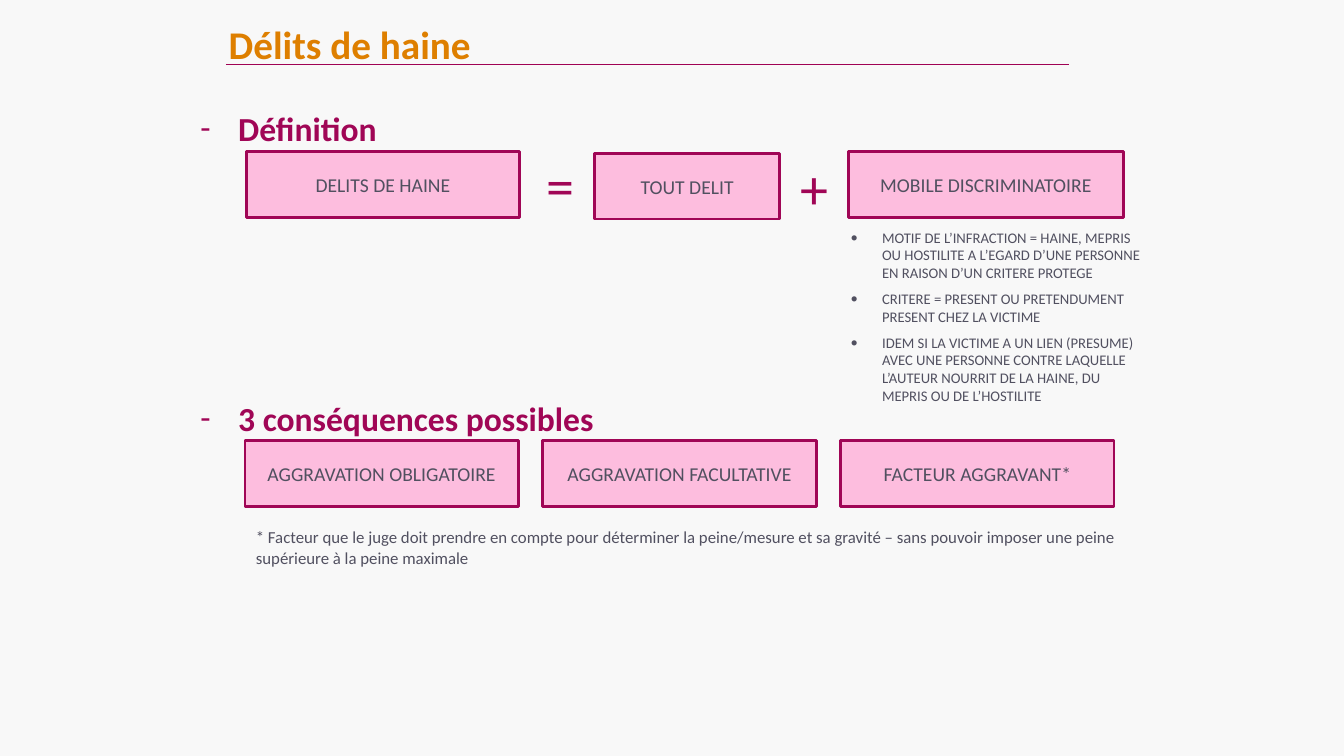
from lxml import etree
from pptx import Presentation
from pptx import dml
from pptx import util as u
from pptx.dml import color
from pptx.enum import shapes, text
from pptx.oxml import ns

Pt = u.Pt
HUES = {"back": "F8F8F8", "gold": "DE7F00", "plum": "A00656",
        "rule": "A00254", "pink": "FDBDDE", "slate": "515060"}
LEFT, MID = text.PP_ALIGN.LEFT, text.PP_ALIGN.CENTER


def hue(name):
    return color.RGBColor.from_string(HUES[name])


def mark(para, sign, dent):
    props = para._p.get_or_add_pPr()
    props.set("marL", str(Pt(dent)))
    props.set("indent", str(-Pt(dent)))
    font = etree.SubElement(props, ns.qn("a:buFont"))
    font.set("typeface", "Calibri")
    char = etree.SubElement(props, ns.qn("a:buChar"))
    char.set("char", sign)


def write(shape, *lines, size, tint="slate", bold=False, align=LEFT,
          anchor=text.MSO_ANCHOR.TOP, sign=None, dent=0, gap=0):
    frame = shape.text_frame
    frame.word_wrap = True
    frame.auto_size = text.MSO_AUTO_SIZE.NONE
    frame.vertical_anchor = anchor
    for i, line in enumerate(lines):
        para = frame.add_paragraph() if i else frame.paragraphs[0]
        if sign:
            mark(para, sign, dent)
        para.alignment = align
        para.space_before = Pt(gap if i else 0)
        run = para.add_run()
        run.text = line
        font = run.font
        font.name, font.size, font.bold = "Calibri", Pt(size), bold
        font.color.rgb = hue(tint)


def label(slide, spot, *lines, **form):
    write(slide.shapes.add_textbox(*map(Pt, spot)), *lines, **form)


def block(slide, words, left, top, width=195.2):
    box = slide.shapes.add_shape(shapes.MSO_SHAPE.RECTANGLE,
                                 *map(Pt, (left, top, width, 47)))
    box.shadow.inherit = False
    box.fill.solid()
    box.fill.fore_color.rgb = hue("pink")
    box.line.color.rgb = hue("plum")
    box.line.width = Pt(2)
    write(box, words, size=14, align=MID, anchor=text.MSO_ANCHOR.MIDDLE)


def rule(slide, left, right, top):
    line = slide.shapes.add_connector(shapes.MSO_CONNECTOR.STRAIGHT,
                                      Pt(left), Pt(top), Pt(right), Pt(top))
    line.line.color.rgb = hue("rule")
    line.line.width = Pt(0.75)
    etree.SubElement(line._element.spPr, ns.qn("a:effectLst"))


def head(slide, words):
    title = slide.shapes.title
    title.left, title.top, title.width, title.height = map(
        Pt, (156.2, 10, 625, 42))
    write(title, words, size=28, tint="gold", bold=True,
          anchor=text.MSO_ANCHOR.MIDDLE)


def main():
    deck = Presentation()
    deck.slide_width, deck.slide_height = Pt(960), Pt(540)
    slide = deck.slides.add_slide(deck.slide_layouts[5])
    slide.background.fill.solid()
    slide.background.fill.fore_color.rgb = hue("back")

    head(slide, "Délits de haine")
    rule(slide, 161.3, 763.9, 46)
    label(slide, (136, 73.4, 688, 250), "Définition", "3 conséquences possibles",
          size=24, tint="plum", bold=True, sign="-", dent=27, gap=178.6)

    block(slide, "DELITS DE HAINE", 176, 108.5)
    block(slide, "TOUT DELIT", 424.6, 109.5, 132.5)
    block(slide, "MOBILE DISCRIMINATOIRE", 606, 108.5, 196.5)
    for sign, left, top in (("=", 383, 103.7), ("+", 564.5, 105.8)):
        label(slide, (left, top, 47.5, 56), sign, size=40, tint="plum")

    label(slide, (600.5, 159.8, 221.8, 161),
          "MOTIF DE L’INFRACTION = HAINE, MEPRIS OU HOSTILITE A L’EGARD "
          "D’UNE PERSONNE EN RAISON D’UN CRITERE PROTEGE",
          "CRITERE\u00a0= PRESENT OU PRETENDUMENT PRESENT CHEZ LA VICTIME".replace("\u00a0", " "),
          "IDEM SI LA VICTIME A UN LIEN (PRESUME) AVEC UNE PERSONNE CONTRE "
          "LAQUELLE L’AUTEUR NOURRIT DE LA HAINE, DU MEPRIS OU DE L’HOSTILITE",
          size=10.5, sign="•", dent=22.5, gap=6)

    effects = ("AGGRAVATION OBLIGATOIRE", "AGGRAVATION FACULTATIVE",
               "FACTEUR AGGRAVANT*")
    for i, words in enumerate(effects):
        block(slide, words, 175 + 212.8 * i, 314.8)
    label(slide, (175.7, 373, 630.7, 36.7),
          "* Facteur que le juge doit prendre en compte pour déterminer la "
          "peine/mesure et sa gravité – sans pouvoir imposer une peine "
          "supérieure à la peine maximale", size=12)
    deck.save("out.pptx")


if __name__ == "__main__":
    main()
